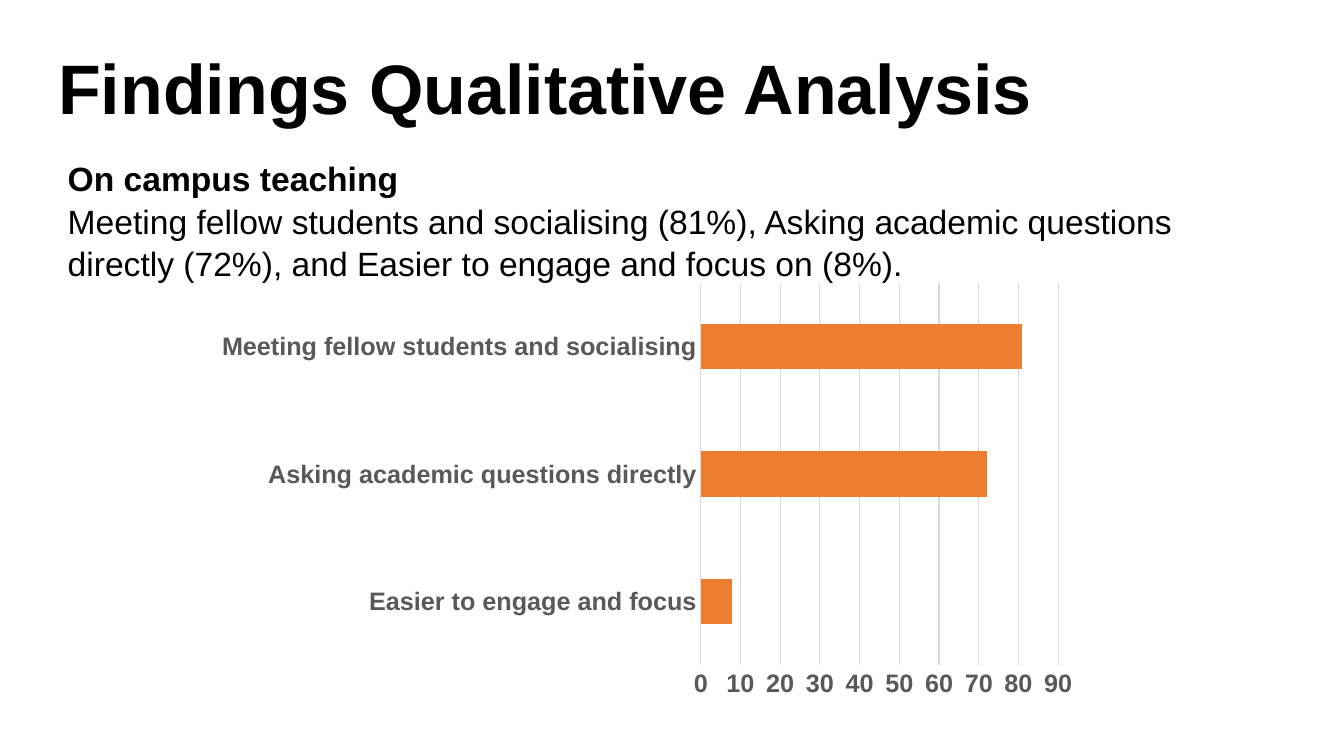
from dataclasses import dataclass

from pptx import Presentation
from pptx import util as u
from pptx.chart import data
from pptx.dml.color import RGBColor
from pptx.enum import chart as ch, text


@dataclass(frozen=True)
class Theme:
    font: str = "Arial"
    ink: str = "000000"
    label: str = "595959"
    rule: str = "D9D9D9"
    bar: str = "ED7D31"
    title: int = 50
    body: int = 24
    axis: int = 18
    hairline: float = 0.75


class Deck:
    """Draws styled elements on one slide, placed by shares of its size."""

    def __init__(self, prs, theme):
        self.prs, self.theme = prs, theme
        self.s = prs.slides.add_slide(prs.slide_layouts[6])

    def place(self, x, y, w, h):
        width, height = self.prs.slide_width, self.prs.slide_height
        return [int(v) for v in (x * width, y * height, w * width, h * height)]

    def style(self, font, size, color, bold):
        font.name, font.size, font.bold = self.theme.font, u.Pt(size), bold
        font.color.rgb = RGBColor.from_string(color)

    def rule(self, line):
        line.color.rgb = RGBColor.from_string(self.theme.rule)
        line.width = u.Pt(self.theme.hairline)

    def text(self, box, lines, size, spacing):
        tf = self.s.shapes.add_textbox(*self.place(*box)).text_frame
        tf.word_wrap = True
        tf.vertical_anchor = text.MSO_ANCHOR.TOP
        for i, (line, bold) in enumerate(lines):
            p = tf.add_paragraph() if i else tf.paragraphs[0]
            p.text = line
            p.line_spacing = spacing
            self.style(p.font, size, self.theme.ink, bold)

    def bars(self, box, name, values, top, step):
        t = self.theme
        cd = data.CategoryChartData()
        cd.categories = list(values)
        cd.add_series(name, list(values.values()))
        chart = self.s.shapes.add_chart(
            ch.XL_CHART_TYPE.BAR_CLUSTERED, *self.place(*box), cd).chart
        chart.has_legend = chart.has_title = False
        self.style(chart.font, t.axis, t.ink, True)

        plot = chart.plots[0]
        plot.gap_width, plot.vary_by_categories = 182, False
        fill = plot.series[0].format.fill
        fill.solid()
        fill.fore_color.rgb = RGBColor.from_string(t.bar)

        for axis in (chart.category_axis, chart.value_axis):
            axis.major_tick_mark = axis.minor_tick_mark = ch.XL_TICK_MARK.NONE
            self.style(axis.tick_labels.font, t.axis, t.label, True)
        self.rule(chart.category_axis.format.line)
        axis = chart.value_axis
        axis.minimum_scale, axis.maximum_scale, axis.major_unit = 0, top, step
        axis.format.line.fill.background()
        axis.has_major_gridlines = True
        self.rule(axis.major_gridlines.format.line)


def main():
    prs = Presentation()
    prs.slide_width, prs.slide_height = u.Inches(13.33), u.Inches(7.5)
    theme = Theme()
    deck = Deck(prs, theme)
    deck.text((0.043, 0.2, 0.863, 0.457), [
        ("On campus teaching", True),
        ("Meeting fellow students and socialising (81%), Asking academic "
         "questions directly (72%), and Easier to engage and focus on (8%).",
         False),
    ], theme.body, 1.05)
    deck.text((0.036, 0.065, 0.863, 0.096),
              [("Findings Qualitative Analysis", True)], theme.title, 0.9)
    deck.bars((0.152, 0.363, 0.659, 0.571), "Series 1", {
        "Easier to engage and focus": 8,
        "Asking academic questions directly": 72,
        "Meeting fellow students and socialising": 81,
    }, top=90, step=10)
    prs.save("out.pptx")


if __name__ == "__main__":
    main()
